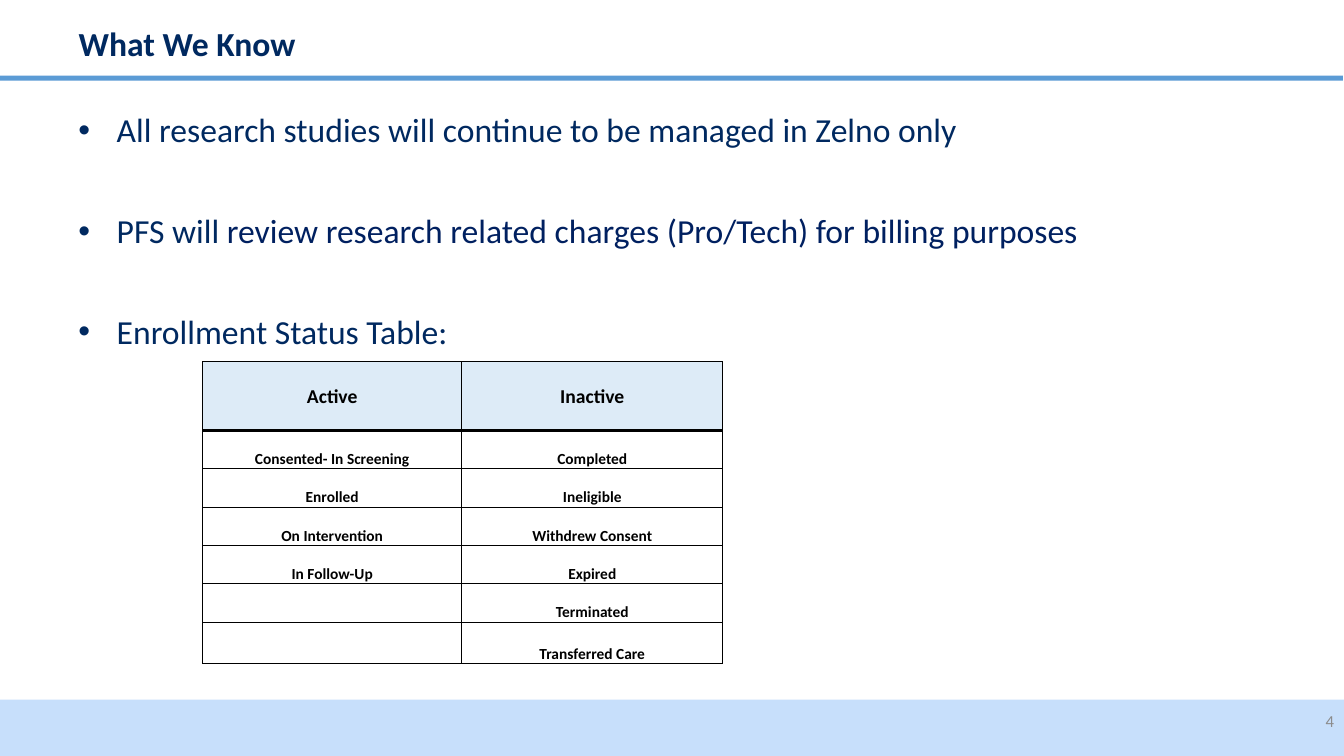
"""Build the What We Know slide with its enrollment status table."""
from lxml.etree import SubElement
from pptx import Presentation
from pptx.dml.color import RGBColor
from pptx.enum.shapes import MSO_SHAPE
from pptx.enum.text import MSO_ANCHOR, PP_ALIGN
from pptx.oxml.ns import qn
from pptx.util import Inches, Pt

TITLE = "What We Know"
POINTS = [
    [("All research studies will continue to be managed in Zelno only", "navy")],
    [("PFS will ", "navy"),
     ("research", "ink")],
    [("Enrollment Status Table:", "navy")],
]
POINTS[1][1] = ("review research related charges (Pro/Tech) for billing purposes", "ink")
STATUS = [
    ("Active", "Inactive"),
    ("Consented- In Screening", "Completed"),
    ("Enrolled", "Ineligible"),
    ("On Intervention", "Withdrew Consent"),
    ("In Follow-Up", "Expired"),
    ("", "Terminated"),
    ("", "Transferred Care"),
]
PAGE = "4"
FONT = "Calibri"
COLORS = {
    "navy": "002960", "ink": "002060", "rule": "5B9BD5", "foot": "C7DFFB",
    "head": "DDEBF7", "white": "FFFFFF", "black": "000000", "gray": "8C8C8C",
}
WIDTH, HEIGHT = Inches(13.33), Inches(7.5)
PLACES = {
    "foot": (0, 92.53, 100, 7.47),
    "rule": (0, 10, 99.92, 0.67),
    "title": (5.1, 1.87, 82.6, 8.27),
    "body": (5.1, 14.4, 89.87, 75.07),
    "page": (77.49, 92.67, 22.51, 5.33),
    "table": (15.08, 47.87, 38.71, 39.87),
}
COLS = [2.57, 2.59]
ROWS = [0.68] + [0.38] * 5 + [0.41]


def color(name):
    return RGBColor.from_string(COLORS[name])


def place(name):
    """Turn percent shares of the slide into lengths."""
    left, top, wide, high = PLACES[name]
    return [int(share * side / 100) for share, side in
            ((left, WIDTH), (top, HEIGHT), (wide, WIDTH), (high, HEIGHT))]


def write(para, text, size, tint, bold=False):
    run = para.add_run()
    run.text = text
    font = run.font
    font.name, font.size, font.bold = FONT, Pt(size), bold
    font.color.rgb = color(tint)


def add_bar(slide, name):
    bar = slide.shapes.add_shape(MSO_SHAPE.RECTANGLE, *place(name))
    bar.shadow.inherit = False
    bar.fill.solid()
    bar.fill.fore_color.rgb = color(name)
    bar.line.fill.background()


def add_title(slide):
    title = slide.shapes.title
    title.left, title.top, title.width, title.height = place("title")
    title.text_frame.vertical_anchor = MSO_ANCHOR.MIDDLE
    para = title.text_frame.paragraphs[0]
    para.alignment, para.line_spacing = PP_ALIGN.LEFT, 0.9
    write(para, TITLE, 24, "navy", True)


def add_points(slide):
    frame = slide.shapes.add_textbox(*place("body")).text_frame
    frame.word_wrap = True
    for i, runs in enumerate(POINTS):
        para = frame.add_paragraph() if i else frame.paragraphs[0]
        props = para._p.get_or_add_pPr()
        props.set("marL", str(Inches(0.38)))
        props.set("indent", str(-Inches(0.38)))
        SubElement(props, qn("a:buFont"), typeface="Arial")
        SubElement(props, qn("a:buChar"), char="•")
        para.line_spacing = 0.9
        para.space_before = Pt(46 if i else 0)
        for text, tint in runs:
            write(para, text, 24, tint)


def add_page(slide):
    frame = slide.shapes.add_textbox(*place("page")).text_frame
    frame.word_wrap = True
    frame.vertical_anchor = MSO_ANCHOR.MIDDLE
    para = frame.paragraphs[0]
    para.alignment = PP_ALIGN.RIGHT
    write(para, PAGE, 12, "gray")


def set_edges(cell, row, col):
    """Draw thick outer edges, thin inner ones and a heavy header rule."""
    edges = {
        "lnL": 0.5 if col else 1,
        "lnR": 1 if col == len(COLS) - 1 else 0.5,
        "lnT": {0: 1, 1: 2}.get(row, 0.5),
        "lnB": {0: 2, len(ROWS) - 1: 1}.get(row, 0.5),
    }
    props = cell._tc.get_or_add_tcPr()
    for tag, width in edges.items():
        line = SubElement(props, qn("a:" + tag), w=str(Pt(width)))
        fill = SubElement(line, qn("a:solidFill"))
        SubElement(fill, qn("a:srgbClr"), val=COLORS["black"])


def add_status(slide):
    table = slide.shapes.add_table(len(ROWS), len(COLS), *place("table")).table
    table.first_row = table.horz_banding = False
    for col, wide in zip(table.columns, COLS):
        col.width = Inches(wide)
    for r, high in enumerate(ROWS):
        table.rows[r].height = Inches(high)
        for c, text in enumerate(STATUS[r]):
            cell = table.cell(r, c)
            set_edges(cell, r, c)
            cell.fill.solid()
            cell.fill.fore_color.rgb = color("white" if r else "head")
            cell.margin_left = cell.margin_right = cell.margin_top = Inches(0.01)
            cell.margin_bottom = 0
            cell.vertical_anchor = MSO_ANCHOR.BOTTOM if r else MSO_ANCHOR.MIDDLE
            para = cell.text_frame.paragraphs[0]
            para.alignment = PP_ALIGN.CENTER
            if text:
                write(para, text, 11 if r else 14, "black", True)


def main():
    deck = Presentation()
    deck.slide_width, deck.slide_height = WIDTH, HEIGHT
    slide = deck.slides.add_slide(deck.slide_layouts[5])
    for name in ("foot", "rule"):
        add_bar(slide, name)
    add_title(slide)
    add_points(slide)
    add_page(slide)
    add_status(slide)
    deck.save("out.pptx")


if __name__ == "__main__":
    main()
